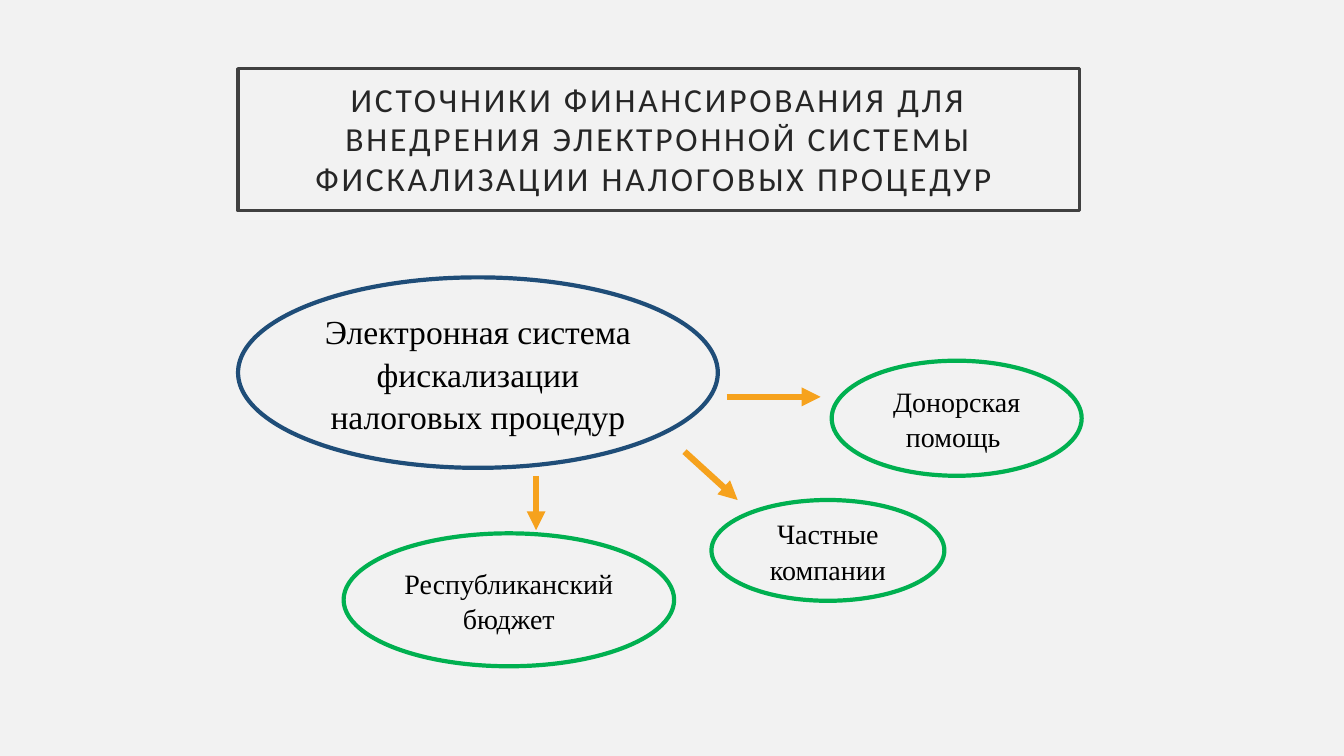
from pptx import Presentation
from pptx.dml.color import RGBColor
from pptx.enum.shapes import MSO_CONNECTOR, MSO_SHAPE
from pptx.enum.text import MSO_ANCHOR, MSO_AUTO_SIZE, PP_ALIGN
from pptx.oxml.ns import qn
from pptx.util import Cm, Pt
from lxml.etree import SubElement

GREEN = "00B050"


def color(value):
    return RGBColor.from_string(value)


def set_line(line, value, width):
    line.color.rgb = color(value)
    line.width = Pt(width)


def place(sp, left, top, width, height):
    box = {"left": left, "top": top, "width": width, "height": height}
    for name, value in box.items():
        setattr(sp, name, Cm(value))


def set_text(sp, text, font, size, value, spacing, inset):
    tf = sp.text_frame
    margins = {"margin_" + side: Cm(inset[i % 2])
               for i, side in enumerate(("left", "top", "right", "bottom"))}
    formats = {"word_wrap": True, "auto_size": MSO_AUTO_SIZE.NONE,
               "vertical_anchor": MSO_ANCHOR.MIDDLE, **margins}
    for name, setting in formats.items():
        setattr(tf, name, setting)
    p = tf.paragraphs[0]
    p.alignment = PP_ALIGN.CENTER
    p.line_spacing = spacing
    r = p.add_run()
    r.text = text
    for name, setting in {"name": font, "size": Pt(size), "bold": False}.items():
        setattr(r.font, name, setting)
    r.font.color.rgb = color(value)
    return r


def add_title(s, text):
    sp = s.shapes.title
    place(sp, 6, 1.73, 21.21, 3.58)
    sp.fill.background()
    set_line(sp.line, "404040", 2.5)
    r = set_text(sp, text, "Calibri", 24, "262626", 0.98, (0.5, 0.5))
    r.font._element.set("spc", "200")  # letter spacing


def add_ellipse(s, text, box, outline, size):
    sp = s.shapes.add_shape(MSO_SHAPE.OVAL, *map(Cm, box))
    sp.shadow.inherit = False
    sp.fill.background()
    set_line(sp.line, outline, 3)
    set_text(sp, text, "Times New Roman", size, "000000", 1.05, (0.25, 0.13))


def add_arrow(s, *ends):
    cxn = s.shapes.add_connector(MSO_CONNECTOR.STRAIGHT, *map(Cm, ends))
    set_line(cxn.line, "F6A21D", 4.5)
    SubElement(cxn.line._get_or_add_ln(), qn("a:tailEnd"), type="triangle")
    SubElement(cxn._element.spPr, qn("a:effectLst"))


def main():
    prs = Presentation()
    prs.slide_width, prs.slide_height = Cm(33.87), Cm(19.05)
    s = prs.slides.add_slide(prs.slide_layouts[5])
    s.background.fill.solid()
    s.background.fill.fore_color.rgb = color("F2F2F2")

    add_title(s, "ИСТОЧНИКИ ФИНАНСИРОВАНИЯ ДЛЯ ВНЕДРЕНИЯ ЭЛЕКТРОННОЙ СИСТЕМЫ "
                 "ФИСКАЛИЗАЦИИ НАЛОГОВЫХ ПРОЦЕДУР ")

    # The system and its funding sources
    add_ellipse(s, "Электронная система фискализации налоговых процедур",
                (6, 6.99, 12.09, 4.8), "1F4D78", 24)
    sources = [
        ("Донорская помощь ", (20.96, 9.09, 6.3, 2.9)),
        ("Республиканский бюджет", (8.66, 13.44, 8.33, 3.35)),
        ("Частные компании", (17.93, 12.6, 5.87, 2.54)),
    ]
    for text, box in sources:
        add_ellipse(s, text, box, GREEN, 20)

    # Arrows from the system to each source
    for ends in [(18.31, 10, 20.68, 10),
                 (13.51, 11.99, 13.51, 13.36),
                 (17.25, 11.38, 18.59, 12.6)]:
        add_arrow(s, *ends)

    prs.save("out.pptx")


if __name__ == "__main__":
    main()
